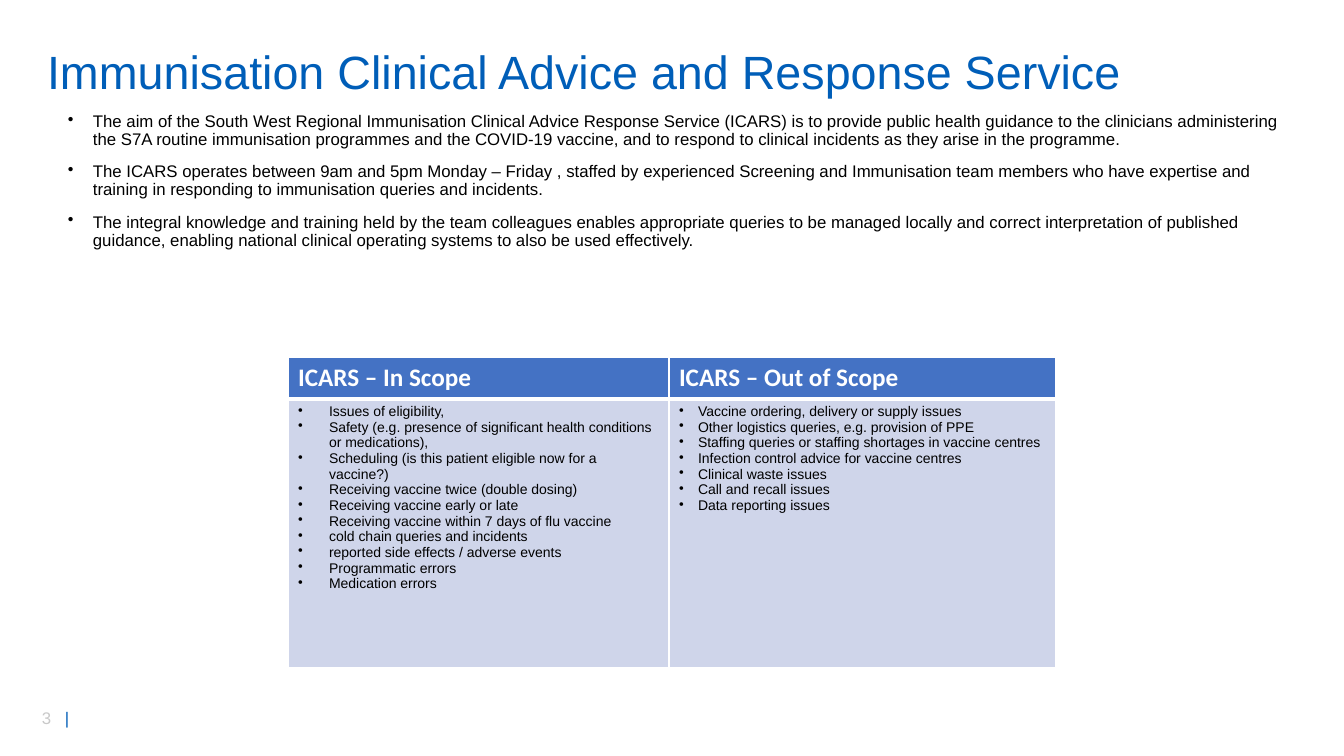
import pptx
import pptx.util
import pptx.dml.color
import pptx.enum.text
import pptx.oxml.ns
import lxml.etree

EMU_PER_PX = 914400 / 100.8
COLOURS = {
    "blue": "005EB8", "grey": "C9C9C9", "black": "000000",
    "white": "FFFFFF", "header": "4472C4", "scope": "CFD5EA",
}
HEADING = {"size": 18, "name": "Calibri", "bold": True, "color": "white"}
SCOPE_TEXT = {"size": 10, "name": "Arial", "bold": False, "color": "black"}
BODY_TEXT = {"size": 12, "name": "Arial", "color": "black"}
TITLE_TEXT = {"size": 33.3, "name": "Arial", "bold": False, "color": "blue"}

AIMS = [
    "The aim of the South West Regional Immunisation Clinical Advice Response Service (ICARS) is to provide public health guidance to the clinicians administering the S7A routine immunisation programmes and the COVID-19 vaccine, and to respond to clinical incidents as they arise in the programme.",
    "The ICARS operates between 9am and 5pm Monday – Friday , staffed by experienced Screening and Immunisation team members who have expertise and training in responding to immunisation queries and incidents.",
    "The integral knowledge and training held by the team colleagues enables appropriate queries to be managed locally and correct interpretation of published guidance, enabling national clinical operating systems to also be used effectively.",
]
# heading, column width, bullet indent, items
SCOPES = [
    ("ICARS – In Scope", 381, 31, [
        "Issues of eligibility,",
        "Safety (e.g. presence of significant health conditions or medications),",
        "Scheduling (is this patient eligible now for a vaccine?)",
        "Receiving vaccine twice (double dosing)",
        "Receiving vaccine early or late",
        "Receiving vaccine within 7 days of flu vaccine",
        "cold chain queries and incidents",
        "reported side effects / adverse events",
        "Programmatic errors",
        "Medication errors",
    ]),
    ("ICARS – Out of Scope", 387, 19, [
        "Vaccine ordering, delivery or supply issues",
        "Other logistics queries, e.g. provision of PPE",
        "Staffing queries or staffing shortages in vaccine centres",
        "Infection control advice for vaccine centres",
        "Clinical waste issues",
        "Call and recall issues",
        "Data reporting issues",
    ]),
]


def px(*lengths):
    return [pptx.util.Emu(round(length * EMU_PER_PX)) for length in lengths]


def write(frame, lines, style, indent=0, **spacing):
    """Fill a text frame with one styled paragraph per line, bulleted if indented."""
    for number, line in enumerate(lines):
        para = frame.add_paragraph() if number else frame.paragraphs[0]
        if indent:
            properties = para._p.get_or_add_pPr()
            margin = px(indent)[0]
            properties.set("marL", str(margin))
            properties.set("indent", str(-margin))
            bullet = lxml.etree.SubElement(properties, pptx.oxml.ns.qn("a:buChar"))
            bullet.set("char", "•")
        for name, value in spacing.items():
            if number or name != "space_before":
                setattr(para, name, value)
        span = para.add_run()
        span.text = line
        for name, value in style.items():
            if name == "color":
                span.font.color.rgb = pptx.dml.color.RGBColor.from_string(COLOURS[value])
            else:
                setattr(span.font, name, pptx.util.Pt(value) if name == "size" else value)


deck = pptx.Presentation()
deck.slide_width, deck.slide_height = px(1344, 756)
slide = deck.slides.add_slide(deck.slide_layouts[5])

# Title
title = slide.shapes.title
title.left, title.top, title.width, title.height = px(37, 40, 1173, 68)
title.text_frame.vertical_anchor = pptx.enum.text.MSO_ANCHOR.MIDDLE
title.text_frame.auto_size = pptx.enum.text.MSO_AUTO_SIZE.NONE
write(title.text_frame, ["Immunisation Clinical Advice and Response Service"], TITLE_TEXT,
      alignment=pptx.enum.text.PP_ALIGN.LEFT, line_spacing=0.9)

# Aims
aims_box = slide.shapes.add_textbox(*px(58, 108, 1247, 283))
aims_box.text_frame.word_wrap = True
write(aims_box.text_frame, AIMS, BODY_TEXT, indent=25,
      line_spacing=0.9, space_before=pptx.util.Pt(10))

# Scope table
table = slide.shapes.add_table(2, 2, *px(288, 357, 768, 311)).table
table.rows[0].height, table.rows[1].height = px(42, 269)
for column, (heading, width, indent, items) in enumerate(SCOPES):
    table.columns[column].width = px(width)[0]
    write(table.cell(0, column).text_frame, [heading], HEADING)
    write(table.cell(1, column).text_frame, items, SCOPE_TEXT, indent)
    for row, fill in enumerate(["header", "scope"]):
        cell = table.cell(row, column)
        for side in "LRTB":
            thick = (row, side) in [(0, "B"), (1, "T")]
            border = lxml.etree.SubElement(
                cell._tc.get_or_add_tcPr(), pptx.oxml.ns.qn(f"a:ln{side}"))
            border.set("w", str(pptx.util.Pt(3 if thick else 1)))
            paint = lxml.etree.SubElement(border, pptx.oxml.ns.qn("a:solidFill"))
            colour = lxml.etree.SubElement(paint, pptx.oxml.ns.qn("a:srgbClr"))
            colour.set("val", COLOURS["white"])
        cell.fill.solid()
        cell.fill.fore_color.rgb = pptx.dml.color.RGBColor.from_string(COLOURS[fill])

# Page number, with its bar set at a tab stop
number_box = slide.shapes.add_textbox(*px(32, 703, 72, 30))
number_box.text_frame.word_wrap = True
number_para = number_box.text_frame.paragraphs[0]
tab_list = lxml.etree.SubElement(
    number_para._p.get_or_add_pPr(), pptx.oxml.ns.qn("a:tabLst"))
tab = lxml.etree.SubElement(tab_list, pptx.oxml.ns.qn("a:tab"))
tab.set("pos", str(px(23)[0]))
tab.set("algn", "l")
for text, colour in [("3\t", "grey"), ("|", "blue")]:
    span = number_para.add_run()
    span.text = text
    span.font.size = pptx.util.Pt(12)
    span.font.name = "Arial"
    span.font.color.rgb = pptx.dml.color.RGBColor.from_string(COLOURS[colour])

deck.save("out.pptx")
